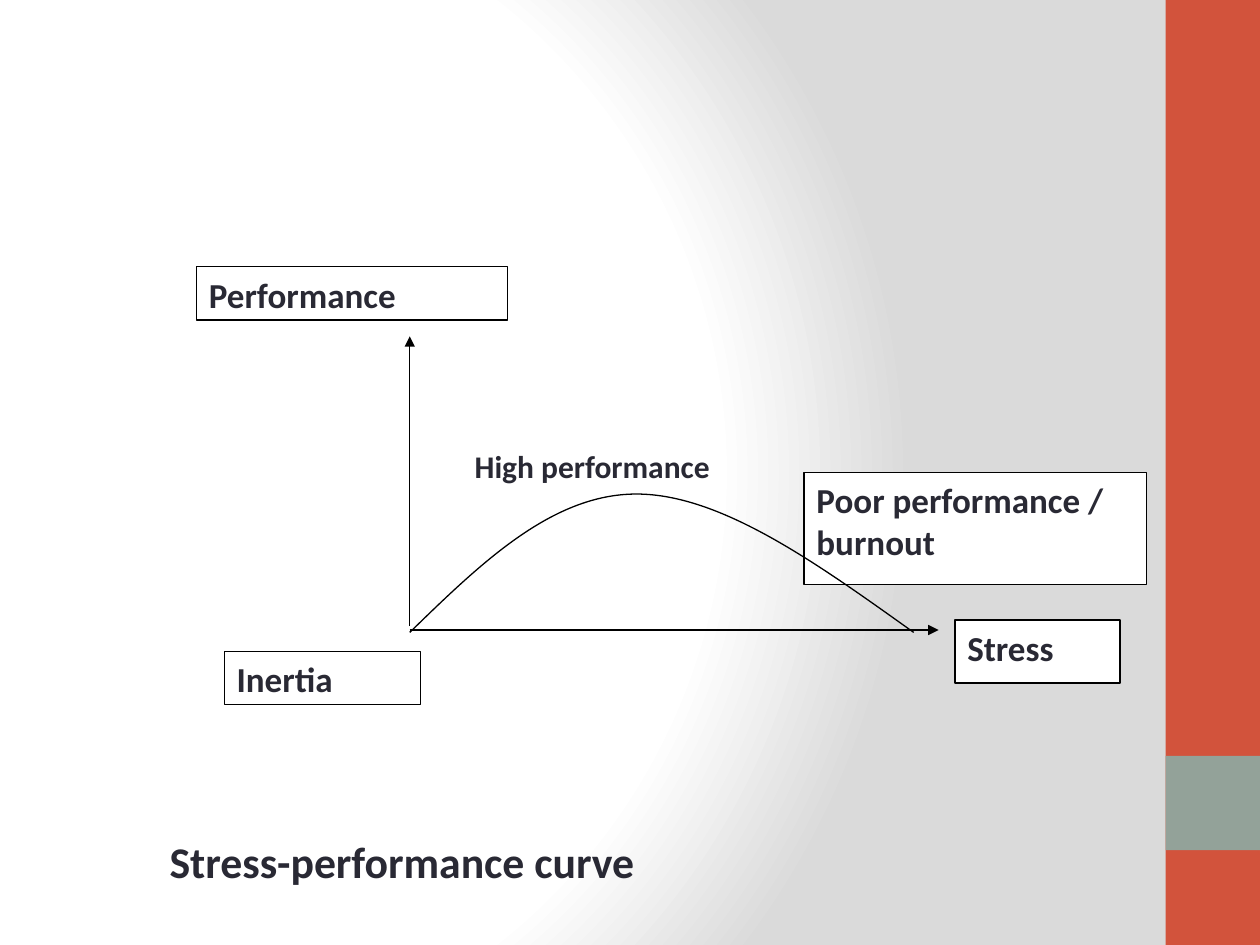
import pptx
import pptx.dml.color
import pptx.enum.shapes
import pptx.enum.text
import pptx.oxml
import pptx.oxml.ns
import pptx.util
from lxml import etree

Cm, Pt = pptx.util.Cm, pptx.util.Pt
RGBColor = pptx.dml.color.RGBColor
qn = pptx.oxml.ns.qn

INK = RGBColor(0x29, 0x29, 0x34)
BLACK = RGBColor(0, 0, 0)
WHITE = RGBColor(0xFF, 0xFF, 0xFF)
RED = RGBColor(0xD2, 0x53, 0x3C)
SAGE = RGBColor(0x93, 0xA2, 0x99)
GREY = RGBColor(0xDA, 0xDA, 0xDA)

FONT = "Calibri"
BACKGROUND = [(0, WHITE), (75, WHITE), (100, GREY)]
BANDS = [
    ((23.5, 0, 1.9, 19.05), RED),
    ((23.5, 15.24, 1.9, 1.9), SAGE),
]
AXES = [
    (8.26, 12.62, 8.26, 6.78),
    (8.26, 12.7, 18.92, 12.7),
]
BOXES = [
    ("Stress", (19.25, 12.5, 3.33, 1.27)),
    ("Performance", (3.96, 5.38, 6.27, 1.07)),
    ("Inertia", (4.52, 13.13, 3.96, 1.07)),
    ("Poor performance / burnout", (16.21, 9.53, 6.91, 2.26)),
]
CURVE_START = (8.26, 12.75)
CURVE = [
    [(9.7, 11.35), (11.13, 9.96), (12.83, 9.96)],
    [(14.53, 9.96), (16.46, 11.35), (18.42, 12.75)],
]
CAPTIONS = [
    (" Stress-performance curve", (2.97, 16.71, 25.4, 1.32), 25, True),
    ("High performance", (9.32, 8.89, 5.51, 1.02), 18, False),
]


def cm(values):
    return [Cm(v) for v in values]


def set_background(s):
    s.background.fill.gradient()
    grad = s.element.find(".//" + qn("a:gradFill"))
    stops = "".join(
        f'<a:gs pos="{pos * 1000}"><a:srgbClr val="{color}"/></a:gs>'
        for pos, color in BACKGROUND
    )
    grad.getparent().replace(grad, pptx.oxml.parse_xml(
        f'<a:gradFill {pptx.oxml.ns.nsdecls("a")} rotWithShape="1">'
        f'<a:gsLst>{stops}</a:gsLst><a:path path="circle">'
        '<a:fillToRect l="20000" t="50000" r="100000" b="50000"/>'
        '</a:path></a:gradFill>'
    ))


def set_line(line):
    line.color.rgb = BLACK
    line.width = Pt(0.75)


def add_rect(s, at, color):
    sp = s.shapes.add_shape(pptx.enum.shapes.MSO_SHAPE.RECTANGLE, *cm(at))
    sp.shadow.inherit = False
    sp.fill.solid()
    sp.fill.fore_color.rgb = color
    sp.line.fill.background()
    return sp


def set_text(sp, text, size, wrap=True):
    tf = sp.text_frame
    tf.text = text
    tf.word_wrap = wrap
    tf.vertical_anchor = pptx.enum.text.MSO_ANCHOR.TOP
    p = tf.paragraphs[0]
    p.alignment = pptx.enum.text.PP_ALIGN.LEFT
    font = p.runs[0].font
    font.name, font.size, font.bold = FONT, Pt(size), True
    font.color.rgb = INK


def add_axis(s, ends):
    line = s.shapes.add_connector(
        pptx.enum.shapes.MSO_CONNECTOR.STRAIGHT, *cm(ends))
    set_line(line.line)
    ln = line.line._get_or_add_ln()
    etree.SubElement(ln, qn("a:tailEnd"), type="triangle")
    etree.SubElement(line.element.spPr, qn("a:effectLst"))


def add_curve(s):
    builder = s.shapes.build_freeform(*cm(CURVE_START))
    builder.add_line_segments([cm(seg[-1]) for seg in CURVE], close=False)
    sp = builder.convert_to_shape()
    sp.shadow.inherit = False
    sp.fill.background()
    set_line(sp.line)
    for straight, seg in zip(list(sp.element.iter(qn("a:lnTo"))), CURVE):
        bend = etree.Element(qn("a:cubicBezTo"))
        for x, y in seg:
            etree.SubElement(bend, qn("a:pt"), x=str(Cm(x) - sp.left),
                             y=str(Cm(y) - sp.top))
        straight.getparent().replace(straight, bend)


def main():
    prs = pptx.Presentation()
    prs.slide_width, prs.slide_height = Cm(25.4), Cm(19.05)
    s = prs.slides.add_slide(prs.slide_layouts[6])
    set_background(s)
    for at, color in BANDS:
        add_rect(s, at, color)
    for ends in AXES:
        add_axis(s, ends)
    for text, at in BOXES:
        sp = add_rect(s, at, WHITE)
        set_line(sp.line)
        set_text(sp, text, 20)
    add_curve(s)
    for text, at, size, wrap in CAPTIONS:
        sp = s.shapes.add_textbox(*cm(at))
        set_text(sp, text, size, wrap)
        sp.text_frame.auto_size = pptx.enum.text.MSO_AUTO_SIZE.SHAPE_TO_FIT_TEXT
    prs.save("out.pptx")


if __name__ == "__main__":
    main()
